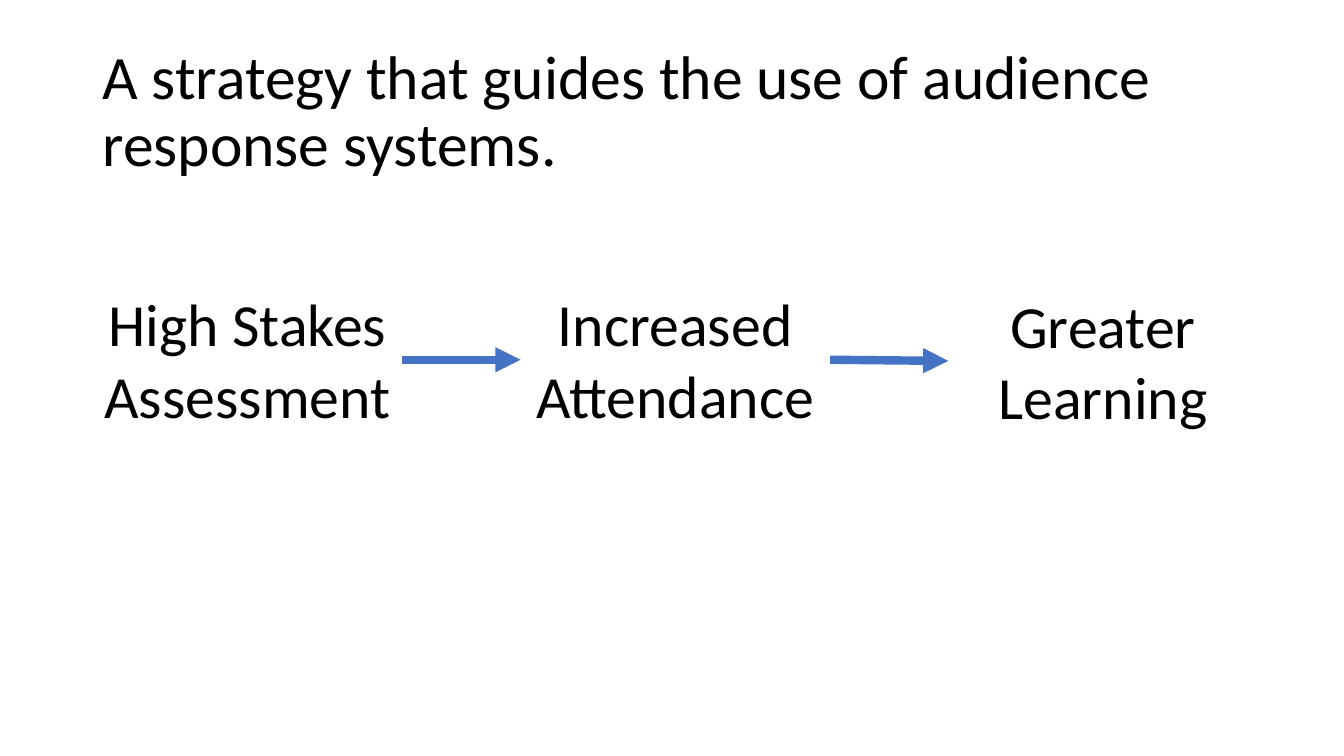
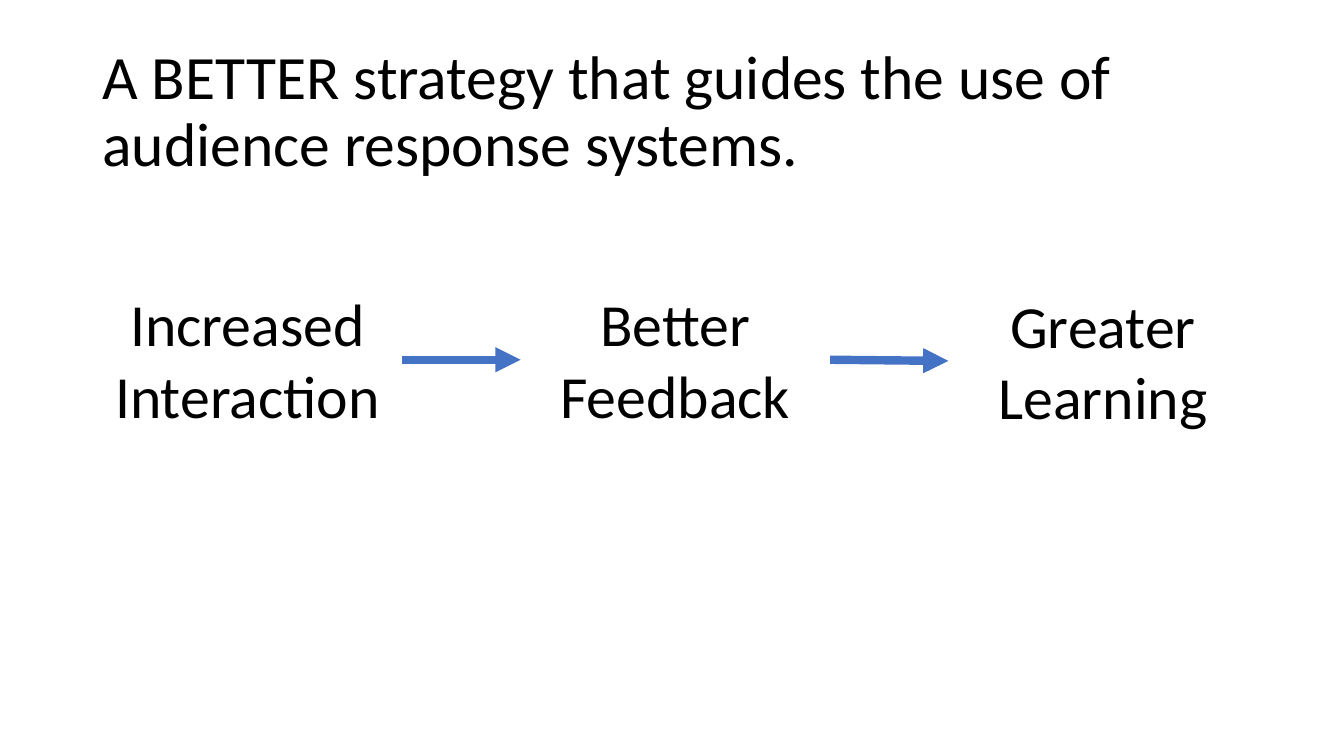
import pptx
import pptx.dml.color
import pptx.enum.shapes
import pptx.enum.text
import pptx.oxml
import pptx.oxml.ns
import pptx.util

Cm, Pt = pptx.util.Cm, pptx.util.Pt
ALIGN = pptx.enum.text.PP_ALIGN
ANCHOR = pptx.enum.text.MSO_ANCHOR
AUTO = pptx.enum.text.MSO_AUTO_SIZE

COLORS = {"text": "000000", "arrow": "4472C4"}
FONT = "Calibri"
TITLE_BOX = (2.33, 1.01, 29.21, 3.68)
CHAIN_BOX = (2.34, 7.11, 29.36, 3.91)
STEP_WIDTH = 7.8
STEP_DROPS = (0, 0, 0.03)

TITLE_STYLE = {
    "frame": {"vertical_anchor": ANCHOR.MIDDLE},
    "paragraph": {"alignment": ALIGN.LEFT, "line_spacing": 0.9},
    "font": {"name": FONT, "size": Pt(44)},
}
STEP_STYLE = {
    "frame": {"vertical_anchor": ANCHOR.TOP, "auto_size": AUTO.SHAPE_TO_FIT_TEXT},
    "paragraph": {"alignment": ALIGN.CENTER},
    "font": {"name": FONT, "size": Pt(42.7)},
}

SLIDES = [
    ("A strategy that guides the use of audience response systems.",
     ["High Stakes\nAssessment", "Increased\nAttendance", "Greater\nLearning"]),
    ("A BETTER strategy that guides the use of audience response systems.",
     ["Increased Interaction", "Better Feedback", "Greater\nLearning"]),
]


def rgb(name):
    return pptx.dml.color.RGBColor.from_string(COLORS[name])


def apply(target, values):
    for key, value in values.items():
        setattr(target, key, value)


def add_text(s, box, text, style):
    sp = s.shapes.add_textbox(*map(Cm, box))
    tf = sp.text_frame
    tf.word_wrap = True
    apply(tf, style["frame"])
    p = tf.paragraphs[0]
    p.text = text
    apply(p, style["paragraph"])
    for r in p.runs:
        apply(r.font, style["font"])
        r.font.color.rgb = rgb("text")


def add_arrow(s, start, end):
    straight = pptx.enum.shapes.MSO_CONNECTOR.STRAIGHT
    sp = s.shapes.add_connector(straight, *map(Cm, start + end))
    sp.line.color.rgb = rgb("arrow")
    sp.line.width = Pt(6)
    ns = pptx.oxml.ns.nsdecls("a")
    ln = sp.line._get_or_add_ln()
    ln.append(pptx.oxml.parse_xml(f'<a:tailEnd {ns} type="triangle"/>'))
    ln.addnext(pptx.oxml.parse_xml(f"<a:effectLst {ns}/>"))


def add_chain(s, box, steps):
    left, top, width, height = box
    pitch = (width - STEP_WIDTH) / (len(steps) - 1)
    previous = None
    for i, (text, drop) in enumerate(zip(steps, STEP_DROPS)):
        x, y = left + i * pitch, top + drop
        middle = y + height / 2
        add_text(s, (x, y, STEP_WIDTH, height), text, STEP_STYLE)
        if previous:
            add_arrow(s, previous, (x, middle))
        previous = (x + STEP_WIDTH, middle)


def add_strategy_slide(prs, title, steps):
    s = prs.slides.add_slide(prs.slide_layouts[6])
    add_text(s, TITLE_BOX, title, TITLE_STYLE)
    add_chain(s, CHAIN_BOX, steps)


def main():
    prs = pptx.Presentation()
    prs.slide_width, prs.slide_height = Cm(33.87), Cm(19.05)
    for title, steps in SLIDES:
        add_strategy_slide(prs, title, steps)
    prs.save("out.pptx")


if __name__ == "__main__":
    main()
